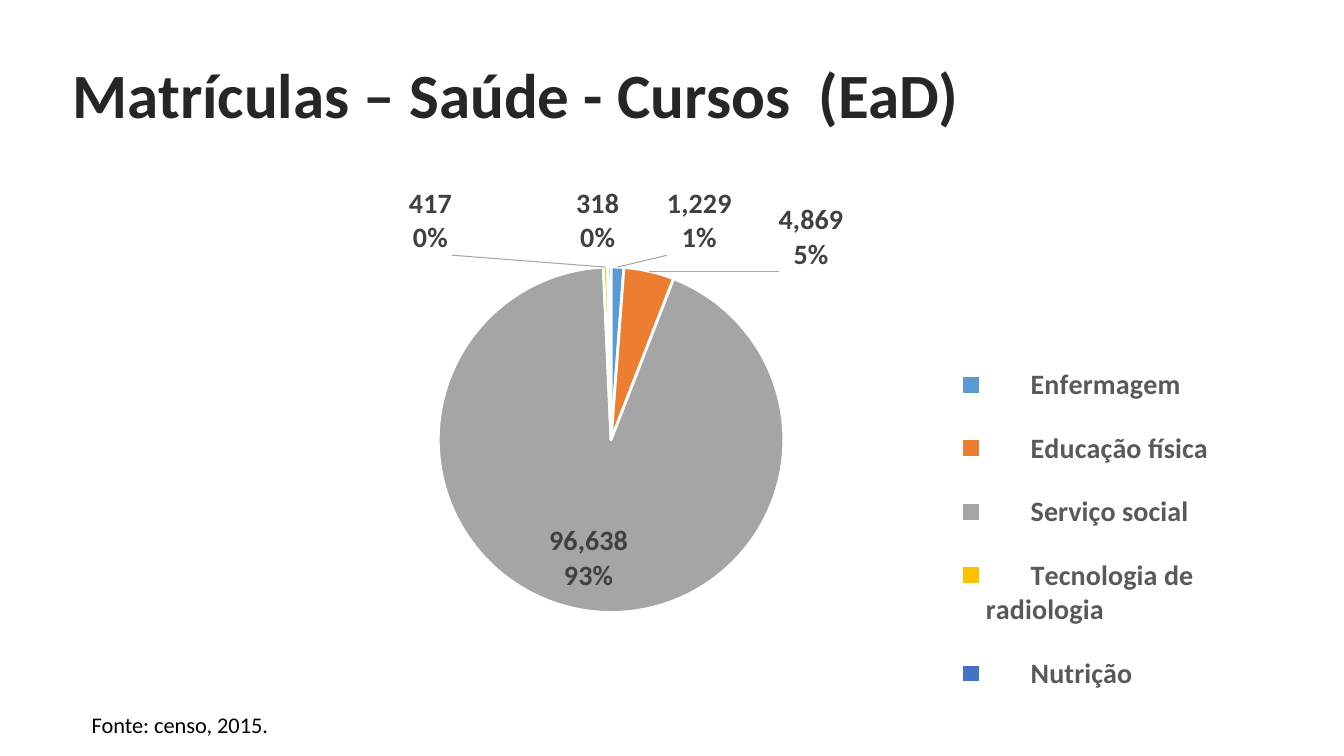
from copy import deepcopy

from pptx import Presentation
from pptx.chart.data import CategoryChartData
from pptx.dml.color import RGBColor
from pptx.enum.chart import XL_CHART_TYPE, XL_LABEL_POSITION, XL_LEGEND_POSITION
from pptx.enum.text import MSO_ANCHOR, MSO_AUTO_SIZE, PP_ALIGN
from pptx.oxml import parse_xml
from pptx.oxml.ns import nsdecls, qn
from pptx.util import Inches, Pt

PIE = XL_CHART_TYPE.PIE
OUTSIDE_END = XL_LABEL_POSITION.OUTSIDE_END
INSIDE_END = XL_LABEL_POSITION.INSIDE_END
BOTTOM = XL_LEGEND_POSITION.BOTTOM
MIDDLE = MSO_ANCHOR.MIDDLE
FIT_SHAPE = MSO_AUTO_SIZE.SHAPE_TO_FIT_TEXT
NO_FIT = MSO_AUTO_SIZE.NONE
LEFT = PP_ALIGN.LEFT

BLACK = RGBColor(0x00, 0x00, 0x00)
WHITE = RGBColor(0xFF, 0xFF, 0xFF)
TITLE_INK = RGBColor(0x26, 0x26, 0x26)
LABEL_INK = RGBColor(0x40, 0x40, 0x40)
LEGEND_INK = RGBColor(0x59, 0x59, 0x59)
LEADER_INK = RGBColor(0xA6, 0xA6, 0xA6)
BLUE = RGBColor(0x5B, 0x9B, 0xD5)
ORANGE = RGBColor(0xED, 0x7D, 0x31)
GREY = RGBColor(0xA5, 0xA5, 0xA5)
YELLOW = RGBColor(0xFF, 0xC0, 0x00)
INDIGO = RGBColor(0x44, 0x72, 0xC4)

COURSES = [
    ("       Enfermagem ", 1229, BLUE, OUTSIDE_END, (0.07, -0.01)),
    ("       Educação física ", 4869, ORANGE, OUTSIDE_END, (0.11, 0.01)),
    ("       Serviço social ", 96638, GREY, INSIDE_END, (-0.03, -0.02)),
    ("       Tecnologia de radiologia ", 417, YELLOW, OUTSIDE_END, (-0.15, -0.01)),
    ("       Nutrição ", 318, INDIGO, OUTSIDE_END, (-0.01, -0.01)),
]


def format_font(font, size, color, bold=True):
    """Apply the deck's font with the given size, colour and weight."""
    values = {"name": "Calibri", "size": Pt(size), "bold": bold}
    for name, value in values.items():
        setattr(font, name, value)
    font.color.rgb = color


def set_layout(parent, index, **values):
    """Give a chart part a manual layout as its child at the index."""
    for old in parent.findall(qn("c:layout")):
        parent.remove(old)
    items = "".join(f'<c:{name} val="{value}"/>' for name, value in values.items())
    parent.insert(index, parse_xml(
        f'<c:layout {nsdecls("c")}><c:manualLayout>{items}</c:manualLayout></c:layout>'
    ))


def add_title(page, box):
    """Place the slide title in its box."""
    title = page.shapes.title
    title.left, title.top, title.width, title.height = map(Inches, box)
    frame = title.text_frame
    frame.auto_size = NO_FIT
    frame.vertical_anchor = MIDDLE
    para = frame.paragraphs[0]
    para.alignment = LEFT
    para.line_spacing = 0.9
    span = para.add_run()
    span.text = "Matrículas – Saúde - Cursos  (EaD)"
    format_font(span.font, 45, TITLE_INK)


def add_labels(series):
    """Show value and share for each slice, with grey leader lines."""
    labels = series.data_labels
    values = {
        "show_value": True,
        "show_percentage": True,
        "number_format": "0%",
        "number_format_is_linked": False,
        "position": OUTSIDE_END,
    }
    for name, value in values.items():
        setattr(labels, name, value)
    format_font(labels.font, 20, LABEL_INK)
    group = labels._element
    leader = group.find(qn("c:showLeaderLines"))
    leader.set("val", "1")
    leader.addprevious(parse_xml(f'<c:separator {nsdecls("c")}>\n</c:separator>'))
    shared = [child for child in group if child is not leader]
    leader.addnext(parse_xml(
        f'<c:leaderLines {nsdecls("c", "a")}><c:spPr><a:ln w="9525"><a:solidFill>'
        f'<a:srgbClr val="{LEADER_INK}"/></a:solidFill></a:ln></c:spPr></c:leaderLines>'
    ))
    for index, (_, _, _, position, (right, down)) in enumerate(COURSES):
        label = parse_xml(f'<c:dLbl {nsdecls("c")}><c:idx val="{index}"/></c:dLbl>')
        set_layout(label, 1, x=right, y=down)
        label.extend(deepcopy(shared))
        group.insert(index, label)
        series.points[index].data_label.position = position


def add_enrolment_chart(page, box):
    """Place the pie of enrolments by course with its legend."""
    data = CategoryChartData()
    data.categories = [course[0] for course in COURSES]
    data.add_series("Series 1", [course[1] for course in COURSES], "#,##0")
    chart = page.shapes.add_chart(PIE, *map(Inches, box), data).chart
    chart.has_title = False
    format_font(chart.font, 20, BLACK)

    plot = chart.plots[0]
    plot.vary_by_categories = True
    series = plot.series[0]
    for index, (_, _, color, _, _) in enumerate(COURSES):
        look = series.points[index].format
        look.fill.solid()
        look.fill.fore_color.rgb = color
        look.line.color.rgb = WHITE
        look.line.width = Pt(2)
    add_labels(series)
    set_layout(chart._chartSpace.chart.plotArea, 0, layoutTarget="inner",
               xMode="edge", yMode="edge", x=0, y=0.23, w=0.86, h=0.58)

    chart.has_legend = True
    legend = chart.legend
    legend.position = BOTTOM
    legend.include_in_layout = False
    format_font(legend.font, 20, LEGEND_INK)
    set_layout(legend._element, 1, xMode="edge", yMode="edge",
               x=0.72, y=0.35, w=0.24, h=0.64)


def add_source(page, box):
    """Place the source note in its box."""
    frame = page.shapes.add_textbox(*map(Inches, box)).text_frame
    frame.word_wrap = False
    frame.auto_size = FIT_SHAPE
    span = frame.paragraphs[0].add_run()
    span.text = "Fonte: censo, 2015."
    format_font(span.font, 16, BLACK, bold=False)


def main():
    """Build and save the deck."""
    deck = Presentation()
    deck.slide_width, deck.slide_height = Inches(13.33), Inches(7.5)
    page = deck.slides.add_slide(deck.slide_layouts[5])
    add_enrolment_chart(page, (1.09, 1.29, 11.56, 5.91))
    add_source(page, (0.81, 7.01, 1.98, 0.37))
    add_title(page, (0.62, 0.38, 11.66, 1.19))
    deck.save("out.pptx")


if __name__ == "__main__":
    main()
